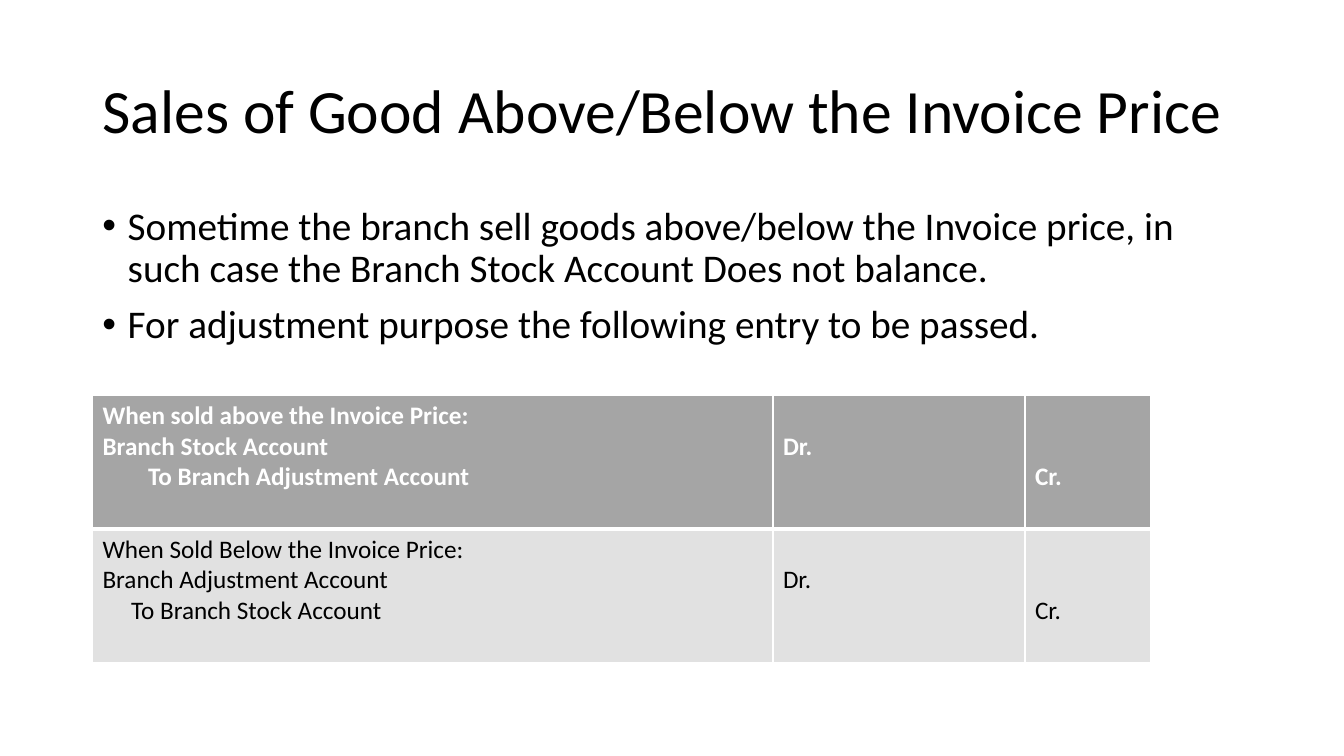
"""Build the slide on goods sold above or below the invoice price."""
from lxml import etree
from pptx import Presentation
from pptx import util as u
from pptx.dml.color import RGBColor
from pptx.enum import text as t
from pptx.oxml.ns import qn

TITLE = "Sales of Good Above/Below the Invoice Price"
POINTS = [
    "Sometime the branch sell goods above/below the Invoice price, "
    "in such case the Branch Stock Account Does not balance.",
    "For adjustment purpose the following entry to be passed.",
]
ENTRIES = [
    {"lines": ["When sold above the Invoice Price:", "Branch Stock Account",
               "To Branch Adjustment Account"],
     "indent": 1.15, "fill": "head", "ink": "white", "bold": True, "edges": (1, 3)},
    {"lines": ["When Sold Below the Invoice Price:", "Branch Adjustment Account",
               "To Branch Stock Account"],
     "indent": 0.72, "fill": "band", "ink": "black", "bold": False, "edges": (3, 1)},
]
SIDES = ["Dr.", "Cr."]
COLORS = {"black": "000000", "white": "FFFFFF", "head": "A5A5A5", "band": "E1E1E1"}
FONT = "Calibri"
LEFT, WIDTH = 2.33, 29.21
COLS = [17.15, 6.35, 3.17]
ROW = 3.37
PAD, LINE = 0.13, 0.775


def place(shape, left, top, width, height):
    shape.left, shape.top = u.Cm(left), u.Cm(top)
    shape.width, shape.height = u.Cm(width), u.Cm(height)


def style(para, size, ink, bold=False):
    for run in para.runs:
        run.font.name, run.font.size, run.font.bold = FONT, u.Pt(size), bold
        run.font.color.rgb = RGBColor.from_string(COLORS[ink])


def indent(para, left, first=0):
    props = para._p.get_or_add_pPr()
    props.set("marL", str(u.Cm(left)))
    props.set("indent", str(u.Cm(first)))
    return props


def border(cell, tag, width):
    line = etree.SubElement(cell._tc.get_or_add_tcPr(), qn(f"a:{tag}"), w=str(u.Pt(width)))
    fill = etree.SubElement(line, qn("a:solidFill"))
    etree.SubElement(fill, qn("a:srgbClr"), val=COLORS["white"])


def add_title(slide):
    title = slide.shapes.title
    place(title, LEFT, 1.01, WIDTH, 3.68)
    frame = title.text_frame
    frame.text = TITLE
    frame.auto_size = t.MSO_AUTO_SIZE.NONE
    frame.vertical_anchor = t.MSO_ANCHOR.MIDDLE
    para = frame.paragraphs[0]
    para.alignment, para.line_spacing = t.PP_ALIGN.LEFT, 0.9
    style(para, 44, "black")


def add_points(slide):
    box = slide.shapes.add_textbox(u.Cm(LEFT), u.Cm(5.07), u.Cm(WIDTH), u.Cm(12.09))
    frame = box.text_frame
    frame.word_wrap = True
    frame.text = "\n".join(POINTS)
    for para in frame.paragraphs:
        para.line_spacing, para.space_before = 0.9, u.Pt(10)
        props = indent(para, 0.64, -0.64)
        etree.SubElement(props, qn("a:buFont"), typeface="Arial")
        etree.SubElement(props, qn("a:buChar"), char="•")
        style(para, 28, "black")


def add_entries(slide):
    size = u.Cm(LEFT), u.Cm(9.96), u.Cm(sum(COLS)), u.Cm(ROW * len(ENTRIES))
    table = slide.shapes.add_table(len(ENTRIES), len(COLS), *size).table
    for col, width in zip(table.columns, COLS):
        col.width = u.Cm(width)
    for row, entry in zip(table.rows, ENTRIES):
        row.height = u.Cm(ROW)
        texts = ["\n".join(entry["lines"])] + SIDES
        top, bottom = entry["edges"]
        for skip, (cell, words) in enumerate(zip(row.cells, texts)):
            cell.text = words
            cell.margin_top = u.Cm(PAD + skip * LINE)
            for tag, width in (("lnL", 1), ("lnR", 1), ("lnT", top), ("lnB", bottom)):
                border(cell, tag, width)
            cell.fill.solid()
            cell.fill.fore_color.rgb = RGBColor.from_string(COLORS[entry["fill"]])
            for para in cell.text_frame.paragraphs:
                style(para, 18, entry["ink"], entry["bold"])
        indent(row.cells[0].text_frame.paragraphs[-1], entry["indent"])


def main():
    deck = Presentation()
    deck.slide_width, deck.slide_height = u.Cm(33.87), u.Cm(19.05)
    slide = deck.slides.add_slide(deck.slide_layouts[5])
    add_title(slide)
    add_points(slide)
    add_entries(slide)
    deck.save("out.pptx")


if __name__ == "__main__":
    main()
